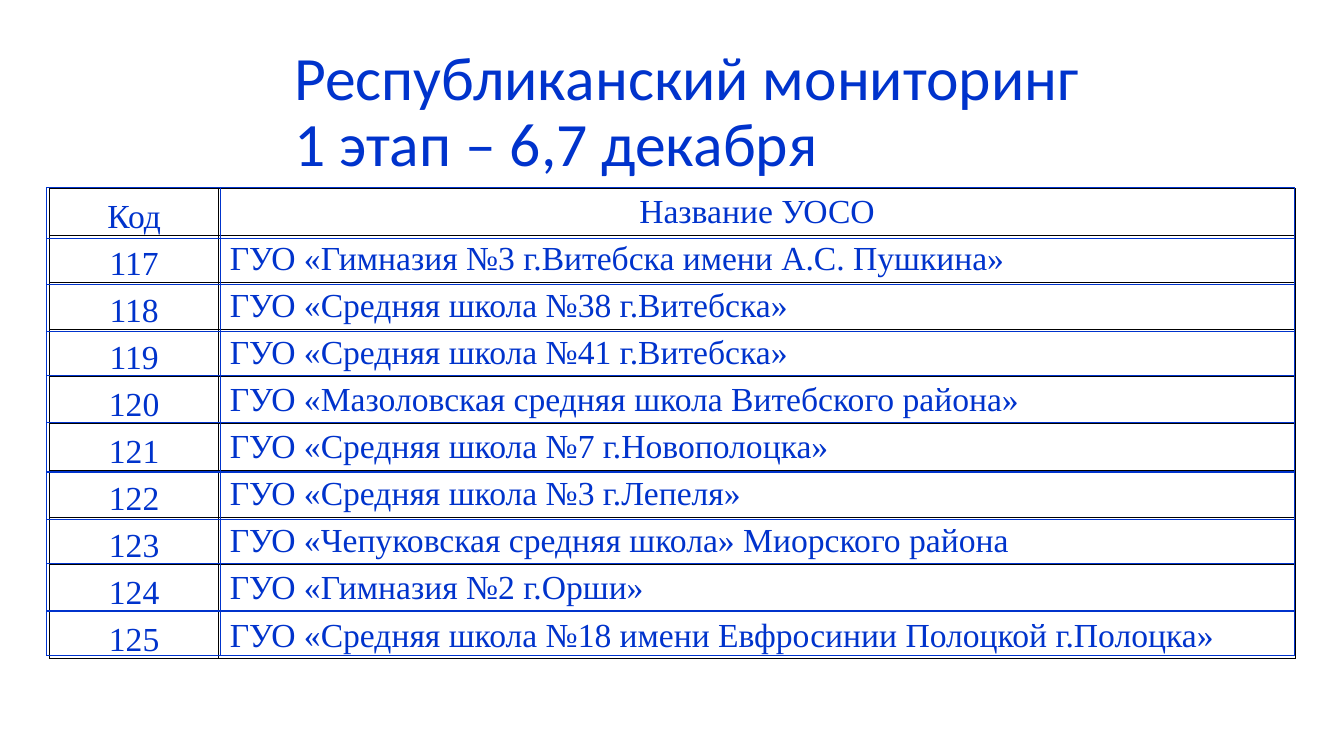
"""Build the monitoring slide with its list of schools."""
from lxml.etree import SubElement
from pptx import Presentation
from pptx.dml.color import RGBColor
from pptx.enum.text import MSO_ANCHOR, PP_ALIGN
from pptx.oxml.ns import qn
from pptx.util import Pt

TITLE = ["Республиканский мониторинг ", "1 этап – 6,7 декабря"]
HEADER = ("Код", "Название УОСО")
FIRST_CODE = 117
SCHOOLS = [
    "ГУО «Гимназия №3 г.Витебска имени А.С. Пушкина»",
    "ГУО «Средняя школа №38 г.Витебска»",
    "ГУО «Средняя школа №41 г.Витебска»",
    "ГУО «Мазоловская средняя школа Витебского района»",
    "ГУО «Средняя школа №7 г.Новополоцка»",
    "ГУО «Средняя школа №3 г.Лепеля»",
    "ГУО «Чепуковская средняя школа» Миорского района",
    "ГУО «Гимназия №2 г.Орши»",
    "ГУО «Средняя школа №18 имени Евфросинии Полоцкой г.Полоцка»",
]
COLORS = {"text": "0033CC", "grid": "000000", "frame": "0033CC"}
LIST_HEIGHTS = [33.6] * (len(SCHOOLS) + 1)
FRAME_HEIGHTS = [36, 33.1, 33.8, 31, 33.8, 35.3, 33.8, 31.7, 33.8, 31.7]


def style_font(font, name, size):
    font.name = name
    font.size = Pt(size)
    font.bold = False
    font.color.rgb = RGBColor.from_string(COLORS["text"])


def add_borders(cell, color, width):
    properties = cell._tc.get_or_add_tcPr()
    for side in ("a:lnL", "a:lnR", "a:lnT", "a:lnB"):
        line = SubElement(properties, qn(side), w=str(Pt(width)))
        fill = SubElement(line, qn("a:solidFill"))
        SubElement(fill, qn("a:srgbClr"), val=color)


def add_grid(slide, left, top, widths, heights, color, line_width):
    shape = slide.shapes.add_table(
        len(heights), len(widths), Pt(left), Pt(top), Pt(sum(widths)), Pt(sum(heights)))
    table = shape.table
    table.first_row = table.horz_banding = False
    for column, width in zip(table.columns, widths):
        column.width = Pt(width)
    for row, height in zip(table.rows, heights):
        row.height = Pt(height)
    for cell in table.iter_cells():
        add_borders(cell, color, line_width)
        cell.fill.background()
    return table


def fill_cell(cell, text, anchor, alignment, margin=0, indent=0):
    cell.text_frame.text = text
    cell.vertical_anchor = anchor
    cell.margin_left = cell.margin_right = cell.margin_top = Pt(0.7)
    cell.margin_bottom = Pt(0)
    paragraph = cell.text_frame.paragraphs[0]
    paragraph.alignment = alignment
    properties = paragraph._p.get_or_add_pPr()
    properties.set("marL", str(Pt(margin)))
    properties.set("indent", str(Pt(indent)))
    style_font(paragraph.runs[0].font, "Times New Roman", 24)


def add_title(slide):
    box = slide.shapes.add_textbox(Pt(203), Pt(28.8), Pt(691.2), Pt(104.4))
    frame = box.text_frame
    frame.word_wrap = True
    frame.vertical_anchor = MSO_ANCHOR.MIDDLE
    frame.text = "\v".join(TITLE)
    paragraph = frame.paragraphs[0]
    paragraph.line_spacing = 0.9
    for run in paragraph.runs:
        style_font(run.font, "Calibri", 44)


def main():
    presentation = Presentation()
    presentation.slide_width, presentation.slide_height = Pt(960), Pt(540)
    slide = presentation.slides.add_slide(presentation.slide_layouts[6])
    add_title(slide)
    table = add_grid(slide, 35.3, 134.6, [121, 769], LIST_HEIGHTS, COLORS["grid"], 0.5)
    fill_cell(table.cell(0, 0), HEADER[0], MSO_ANCHOR.BOTTOM, PP_ALIGN.CENTER)
    fill_cell(table.cell(0, 1), HEADER[1], MSO_ANCHOR.MIDDLE, PP_ALIGN.CENTER, 7.2, -7.2)
    for row, school in enumerate(SCHOOLS, 1):
        code = str(FIRST_CODE + row - 1)
        fill_cell(table.cell(row, 0), code, MSO_ANCHOR.BOTTOM, PP_ALIGN.CENTER)
        fill_cell(table.cell(row, 1), school, MSO_ANCHOR.MIDDLE, PP_ALIGN.JUSTIFY, 7.2)
    add_grid(slide, 33.4, 134.2, [124, 767], FRAME_HEIGHTS, COLORS["frame"], 1)
    presentation.save("out.pptx")


if __name__ == "__main__":
    main()
